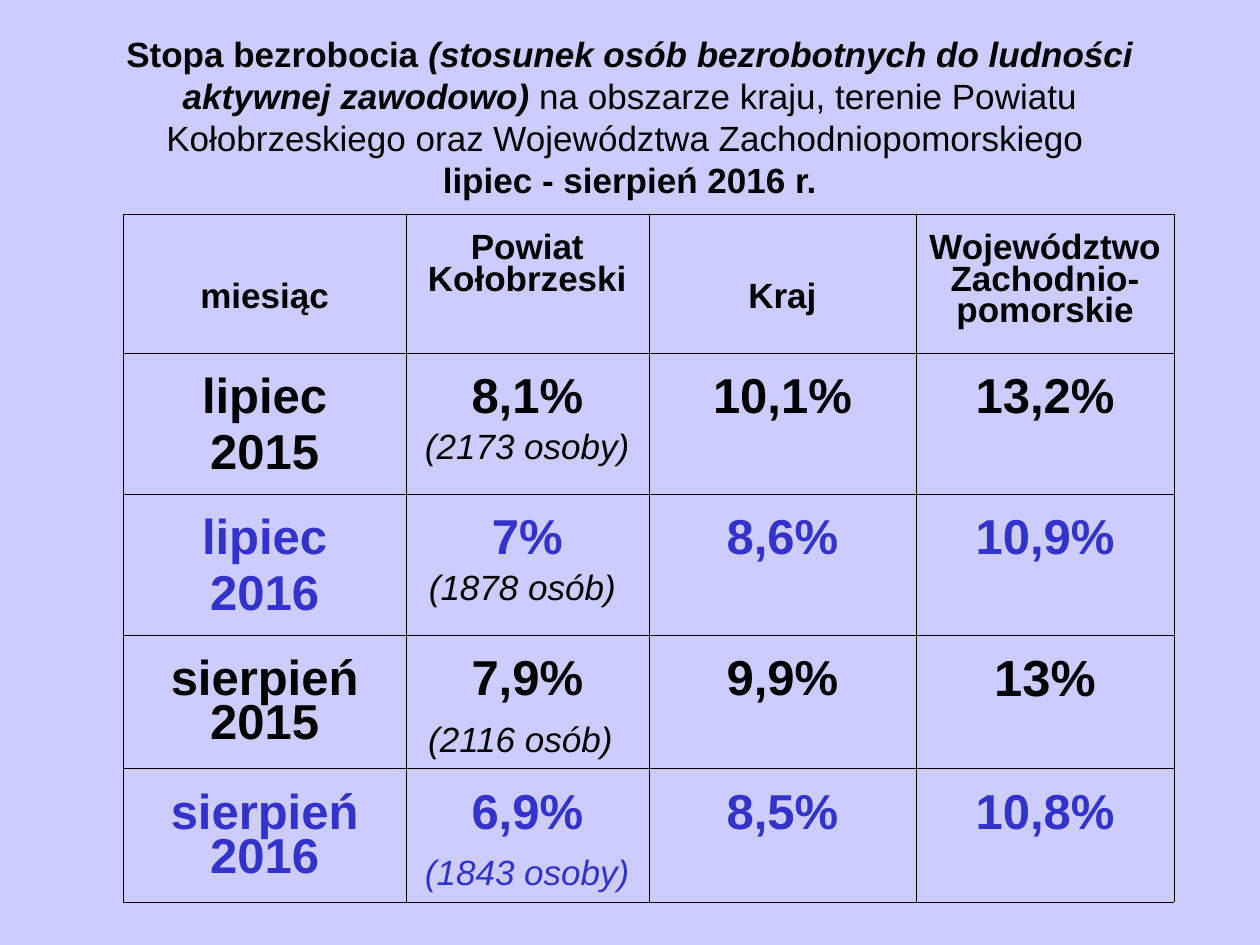
from dataclasses import dataclass

from lxml.etree import SubElement
from pptx import Presentation
from pptx.dml.color import RGBColor
from pptx.enum.text import MSO_ANCHOR, MSO_AUTO_SIZE, PP_ALIGN
from pptx.oxml.ns import qn
from pptx.util import Inches, Pt


@dataclass(frozen=True)
class Theme:
    back: str = "CCCCFF"
    ink: str = "000000"
    blue: str = "3333CC"
    font: str = "Arial"
    small: int = 20
    large: int = 28
    top: int = 29
    thin: float = 0.11
    thick: float = 0.23
    tight: float = 0.81


def place(item, fmt):
    for key, val in fmt.items():
        setattr(item, key, val)


class Deck:
    def __init__(self, theme):
        self.theme = theme
        self.show = Presentation()
        place(self.show, {"slide_width": Inches(10), "slide_height": Inches(7.5)})
        self.slide = self.show.slides.add_slide(self.show.slide_layouts[5])
        fill = self.slide.background.fill
        fill.solid()
        fill.fore_color.rgb = RGBColor.from_string(theme.back)

    def run(self, para, text, size, color, bold=False, italic=False):
        run = para.add_run()
        run.text = text
        place(run.font, {"name": self.theme.font, "size": Pt(size),
                         "bold": bold, "italic": italic})
        run.font.color.rgb = RGBColor.from_string(color)

    def title(self, box, lines):
        shape = self.slide.shapes.title
        place(shape, dict(zip(("left", "top", "width", "height"), map(Inches, box))))
        place(shape.text_frame, {"auto_size": MSO_AUTO_SIZE.NONE, "word_wrap": True,
                                 "vertical_anchor": MSO_ANCHOR.MIDDLE})
        para = shape.text_frame.paragraphs[0]
        para.alignment = PP_ALIGN.CENTER
        for num, line in enumerate(lines):
            if num:
                para.add_line_break()
            for text, fmt in line:
                self.run(para, text, self.theme.small, self.theme.ink, **fmt)

    def edge(self, cell, sides):
        props = cell._tc.get_or_add_tcPr()
        for num, (side, outer) in enumerate(sides.items()):
            width = self.theme.thick if outer else self.theme.thin
            line = props.makeelement(qn(f"a:{side}"), {"w": str(Pt(width))})
            fill = SubElement(line, qn("a:solidFill"))
            SubElement(fill, qn("a:srgbClr"), val=self.theme.ink)
            props.insert(num, line)

    def cell(self, cell, paras, inset, space):
        cell.fill.background()
        place(cell, {"margin_left": Inches(0.1), "margin_right": Inches(0.1),
                     "margin_top": Inches(inset), "margin_bottom": Inches(0.05),
                     "vertical_anchor": MSO_ANCHOR.TOP})
        frame = cell.text_frame
        for num, runs in enumerate(paras):
            para = frame.add_paragraph() if num else frame.paragraphs[0]
            place(para, {"alignment": PP_ALIGN.CENTER, "space_before": Pt(space),
                         "line_spacing": self.theme.tight})
            for text, size, color, fmt in runs:
                self.run(para, text, size, color, **fmt)

    def table(self, spot, wides, highs, rows):
        box = [*spot, sum(wides), sum(highs)]
        grid = self.slide.shapes.add_table(
            len(highs), len(wides), *map(Inches, box)).table
        place(grid, {"first_row": False, "horz_banding": False})
        for col, wide in zip(grid.columns, wides):
            col.width = Inches(wide)
        for row, high in zip(grid.rows, highs):
            row.height = Inches(high)
        for y, row in enumerate(rows):
            for x, (paras, inset, space) in enumerate(row):
                cell = grid.cell(y, x)
                self.cell(cell, paras, inset, space)
                self.edge(cell, {"lnL": x == 0, "lnR": x == len(wides) - 1,
                                 "lnT": y == 0, "lnB": y == len(highs) - 1})

    def save(self):
        self.show.save("out.pptx")


def main():
    theme = Theme()
    deck = Deck(theme)
    bold, slant = {"bold": True}, {"italic": True}

    deck.title((0.5, 0.3, 9, 1.25), [
        [("Stopa bezrobocia ", bold),
         ("(stosunek osób bezrobotnych do ludności aktywnej zawodowo)", bold | slant),
         (" na obszarze kraju, terenie Powiatu Kołobrzeskiego oraz "
          "Województwa Zachodniopomorskiego ", {})],
        [("lipiec - sierpień 2016 r.", bold)],
    ])

    heads = [("miesiąc", 0.55), ("Powiat Kołobrzeski", 0.16),
             ("Kraj", 0.55), ("Województwo Zachodnio-pomorskie", 0.16)]
    rows = [[([[(text, theme.small, theme.ink, bold)]], inset, 5)
             for text, inset in heads]]

    ink, blue = theme.ink, theme.blue
    months = [
        (["lipiec", "2015"], "8,1%", "(2173 osoby)", "", "10,1%", "13,2%", ink, ink),
        (["lipiec", "2016"], "7%", "(1878 osób) ", "", "8,6%", "10,9%", blue, ink),
        (["sierpień 2015"], "7,9%", "(2116 osób)", " ", "9,9%", "13%", ink, ink),
        (["sierpień 2016"], "6,9%", "(1843 osoby)", " ", "8,5%", "10,8%", blue, blue),
    ]
    for names, rate, note, tail, land, area, color, tint in months:
        def big(text):
            size = theme.top if text == "13%" else theme.large
            return [(text, size, color, bold)]

        count = [(note, theme.small, tint, slant)]
        if tail:
            count.append((tail, theme.large, tint, {}))
        cells = [[big(name) for name in names], [big(rate), count],
                 [big(land)], [big(area)]]
        rows.append([(paras, 0.2, 7) for paras in cells])

    deck.table((0.98, 1.7), (2.24, 1.93, 2.12, 2.05),
               (1.1, 1.12, 1.12, 1.06, 1.06), rows)
    deck.save()


if __name__ == "__main__":
    main()
